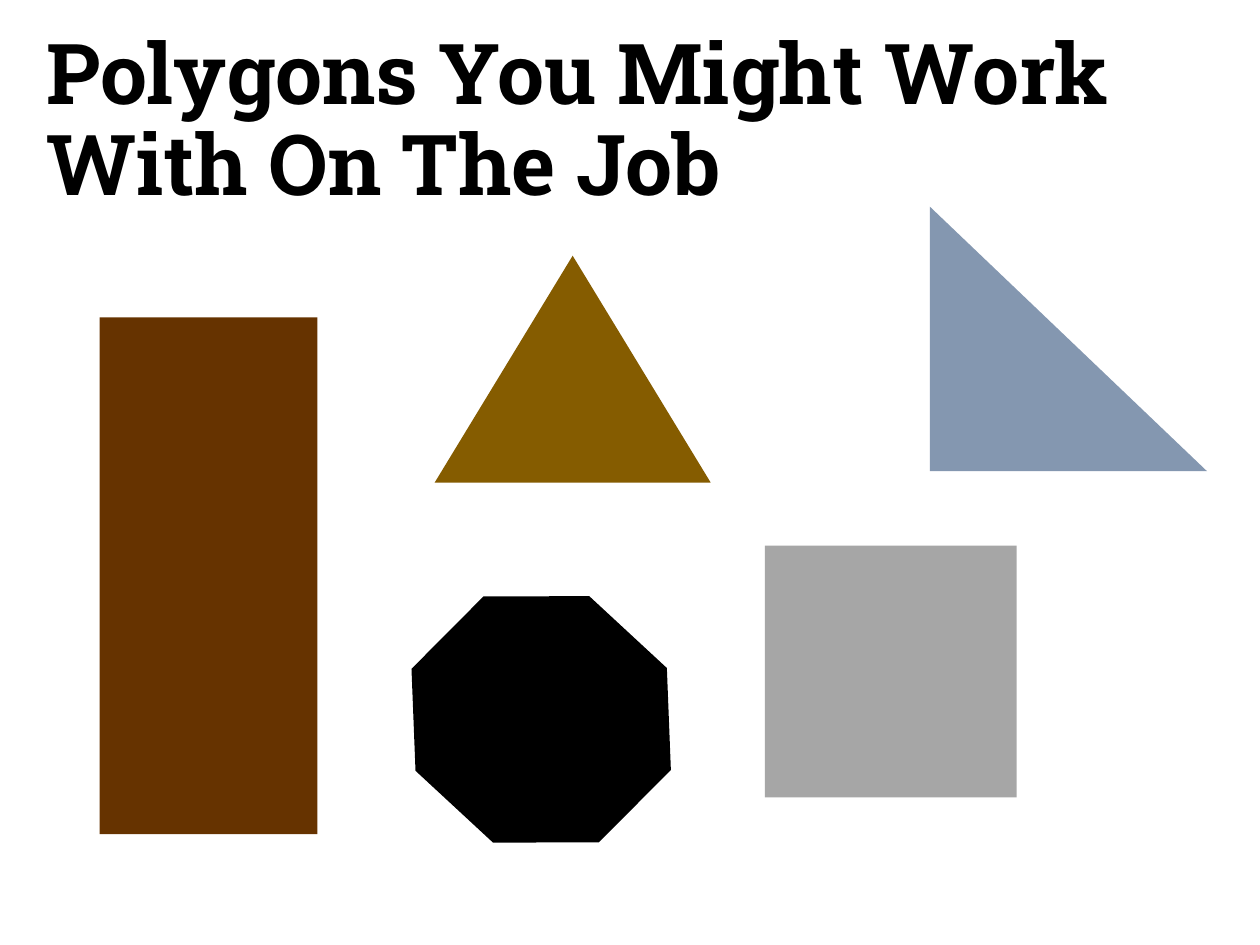
import pptx
import pptx.util
import pptx.dml.color
import pptx.enum.shapes
import pptx.enum.text

Inches = pptx.util.Inches
RGBColor = pptx.dml.color.RGBColor
Shape = pptx.enum.shapes.MSO_SHAPE

BLACK = RGBColor(0x00, 0x00, 0x00)
BROWN = RGBColor(0x66, 0x33, 0x00)
GOLD = RGBColor(0x85, 0x5C, 0x00)
BLUE = RGBColor(0x84, 0x97, 0xB0)
GRAY = RGBColor(0xA6, 0xA6, 0xA6)

# kind, left, top, width, height, colour
POLYGONS = [
    (Shape.ISOSCELES_TRIANGLE, 3.45, 2.03, 2.19, 1.8, GOLD),
    (Shape.RIGHT_TRIANGLE, 7.38, 1.64, 2.2, 2.1, BLUE),
    (Shape.RECTANGLE, 6.07, 4.33, 2, 2, GRAY),
    (Shape.RECTANGLE, 0.79, 2.52, 1.73, 4.1, BROWN),
]


def set_title(slide, text):
    title = slide.shapes.title
    title.left, title.top = Inches(0.27), Inches(0.63)
    title.width, title.height = Inches(9.11), Inches(0.69)
    frame = title.text_frame
    frame.text = text
    frame.word_wrap = True
    frame.auto_size = pptx.enum.text.MSO_AUTO_SIZE.NONE
    frame.vertical_anchor = pptx.enum.text.MSO_ANCHOR.MIDDLE
    line = frame.paragraphs[0]
    line.alignment = pptx.enum.text.PP_ALIGN.LEFT
    line.line_spacing = 0.9
    line.space_before = pptx.util.Pt(0)
    font = line.runs[0].font
    font.name = "Roboto Slab"
    font.size = pptx.util.Pt(48)
    font.bold = True
    font.color.rgb = BLACK


def add_polygon(slide, kind, left, top, width, height, color):
    shape = slide.shapes.add_shape(
        kind, Inches(left), Inches(top), Inches(width), Inches(height))
    shape.shadow.inherit = False
    shape.fill.solid()
    shape.fill.fore_color.rgb = color
    shape.line.fill.background()
    return shape


def add_octagon(slide):
    """A four-point star whose inner corners reach out to form eight sides."""
    star = add_polygon(slide, Shape.STAR_4_POINT, 3.19, 4.66, 2.21, 2.1, BLACK)
    star.adjustments[0] = 0.5
    star.rotation = 21.3


def main():
    deck = pptx.Presentation()
    deck.slide_width, deck.slide_height = Inches(10), Inches(7.5)
    slide = deck.slides.add_slide(deck.slide_layouts[5])
    set_title(slide, "Polygons You Might Work With On The Job")
    for polygon in POLYGONS:
        add_polygon(slide, *polygon)
    add_octagon(slide)
    deck.save("out.pptx")


if __name__ == "__main__":
    main()
